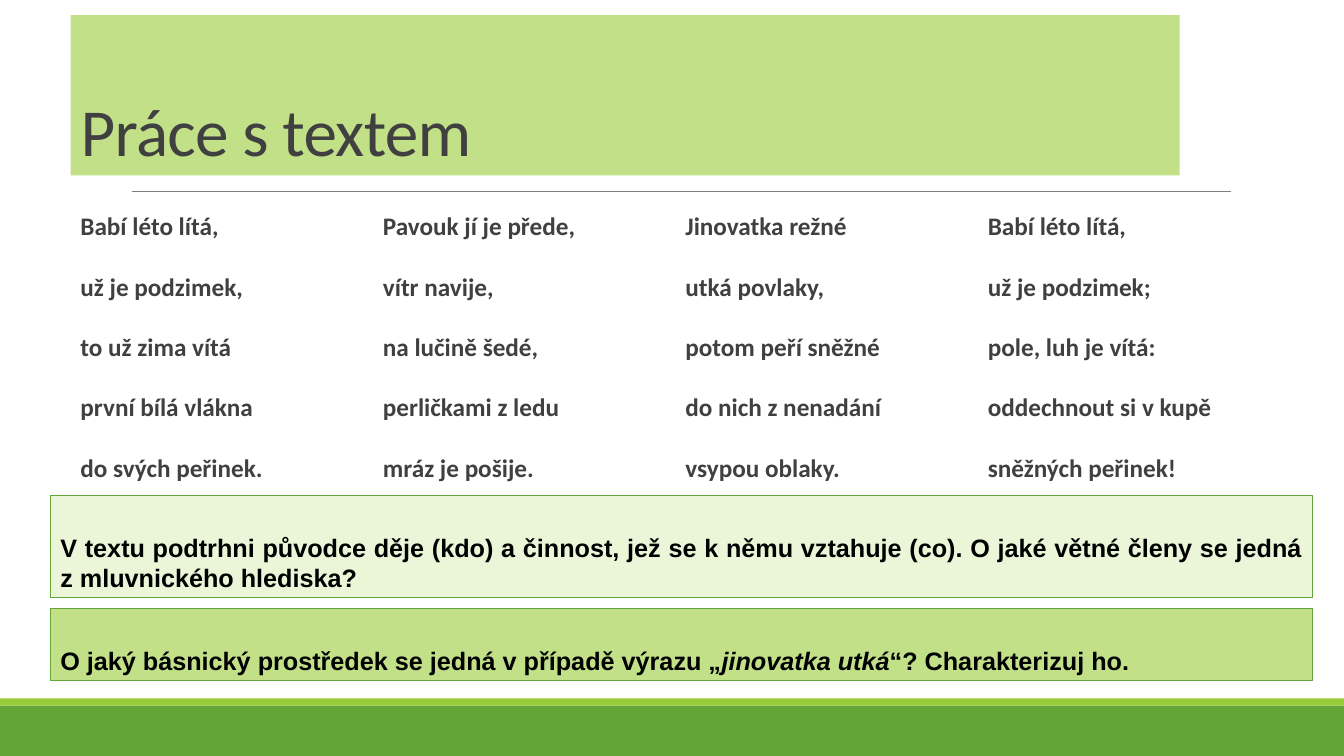
from lxml import etree
from pptx import Presentation
from pptx.dml.color import RGBColor
from pptx.enum.shapes import MSO_CONNECTOR, MSO_SHAPE
from pptx.enum.text import MSO_ANCHOR, MSO_AUTO_SIZE, PP_ALIGN
from pptx.oxml.ns import qn
from pptx.util import Inches, Pt

COLORS = {
    "green": "63A537",
    "lime": "99CB38",
    "light": "C2E088",
    "pale": "EBF5D7",
    "rule": "808080",
    "text": "404040",
    "black": "000000",
}

STANZAS = [
    ["Babí léto lítá,", "už je podzimek,", "to už zima vítá",
     "první bílá vlákna", "do svých peřinek."],
    ["Pavouk jí je přede,", "vítr navije,", "na lučině šedé,",
     "perličkami z ledu", "mráz je pošije."],
    ["Jinovatka režné", "utká povlaky,", "potom peří sněžné",
     "do nich z nenadání", "vsypou oblaky."],
    ["Babí léto lítá,", "už je podzimek;", "pole, luh je vítá:",
     "oddechnout si v kupě", "sněžných peřinek!"],
]

GRAMMAR_TASK = [
    ("V textu podtrhni původce děje (kdo) a činnost, jež se k němu vztahuje "
     "(co). O jaké větné členy se jedná z mluvnického hlediska?", False),
]
POETRY_TASK = [
    ("O jaký básnický prostředek se jedná v případě výrazu „", False),
    ("jinovatka utká", True),
    ("“? Charakterizuj ho.", False),
]


def rgb(name):
    return RGBColor.from_string(COLORS[name])


def add_text(paragraph, text, font="Calibri", size=18, color="text",
             bold=False, italic=False, tracking=None):
    run = paragraph.add_run()
    run.text = text
    run.font.name = font
    run.font.size = Pt(size)
    run.font.color.rgb = rgb(color)
    run.font.bold = bold
    run.font.italic = italic
    if tracking is not None:
        run.font._element.set("spc", str(round(tracking * 100)))


def add_block(slide, left, top, width, height, fill, line=None):
    block = slide.shapes.add_shape(MSO_SHAPE.RECTANGLE, Inches(left),
                                   Inches(top), Inches(width), Inches(height))
    block.shadow.inherit = False
    block.fill.solid()
    block.fill.fore_color.rgb = rgb(fill)
    if line:
        block.line.color.rgb = rgb(line)
        block.line.width = Pt(0.75)
    else:
        block.line.fill.background()
    return block


def add_footer_bands(slide, top, width, height, stripe=0.07):
    add_block(slide, 0, top + stripe, width, height - stripe, "green")
    add_block(slide, 0, top, width, stripe, "lime")


def add_heading(slide, left, top, width, height):
    heading = slide.shapes.title
    heading.left, heading.top = Inches(left), Inches(top)
    heading.width, heading.height = Inches(width), Inches(height)
    heading.fill.solid()
    heading.fill.fore_color.rgb = rgb("light")
    frame = heading.text_frame
    frame.auto_size = MSO_AUTO_SIZE.NONE
    frame.vertical_anchor = MSO_ANCHOR.BOTTOM
    paragraph = frame.paragraphs[0]
    paragraph.alignment = PP_ALIGN.LEFT
    paragraph.line_spacing = 0.85
    add_text(paragraph, "Práce s textem", size=48, tracking=-0.5)

    # Thin rule below the heading
    rule_y = Inches(top + height + 0.16)
    rule = slide.shapes.add_connector(MSO_CONNECTOR.STRAIGHT, Inches(1.31),
                                      rule_y, Inches(12.21), rule_y)
    rule.line.color.rgb = rgb("rule")
    rule.line.width = Pt(0.5)
    etree.SubElement(rule._element.spPr, qn("a:effectLst"))


def add_poem(slide, left, top, width, height):
    column_width = width / len(STANZAS)
    for column, verses in enumerate(STANZAS):
        stanza = slide.shapes.add_textbox(
            Inches(left + column * column_width), Inches(top),
            Inches(column_width), Inches(height))
        frame = stanza.text_frame
        frame.word_wrap = True
        frame.margin_right = 0
        for row, verse in enumerate(verses):
            paragraph = frame.add_paragraph() if row else frame.paragraphs[0]
            paragraph.line_spacing = 1.07
            # The first verse starts at the top of its column
            paragraph.space_before = Pt(12 if row else 0)
            paragraph.space_after = Pt(8)
            add_text(paragraph, verse, bold=True)


def add_task(slide, left, top, width, height, fill, parts):
    task = add_block(slide, left, top, width, height, fill, line="green")
    frame = task.text_frame
    frame.word_wrap = True
    frame.vertical_anchor = MSO_ANCHOR.BOTTOM
    paragraph = frame.paragraphs[0]
    paragraph.alignment = PP_ALIGN.JUSTIFY
    for text, italic in parts:
        add_text(paragraph, text, font="Arial", color="black", bold=True,
                 italic=italic)


def main():
    deck = Presentation()
    deck.slide_width, deck.slide_height = Inches(13.33), Inches(7.5)
    slide = deck.slides.add_slide(deck.slide_layouts.get_by_name("Title Only"))

    add_footer_bands(slide, 6.93, 13.33, 0.57)
    add_heading(slide, 0.7, 0.15, 11, 1.59)
    add_poem(slide, 0.7, 2.02, 12, 2.9)
    add_task(slide, 0.5, 4.92, 12.52, 1.01, "pale", GRAMMAR_TASK)
    add_task(slide, 0.5, 6.04, 12.52, 0.71, "light", POETRY_TASK)

    deck.save("out.pptx")


if __name__ == "__main__":
    main()
